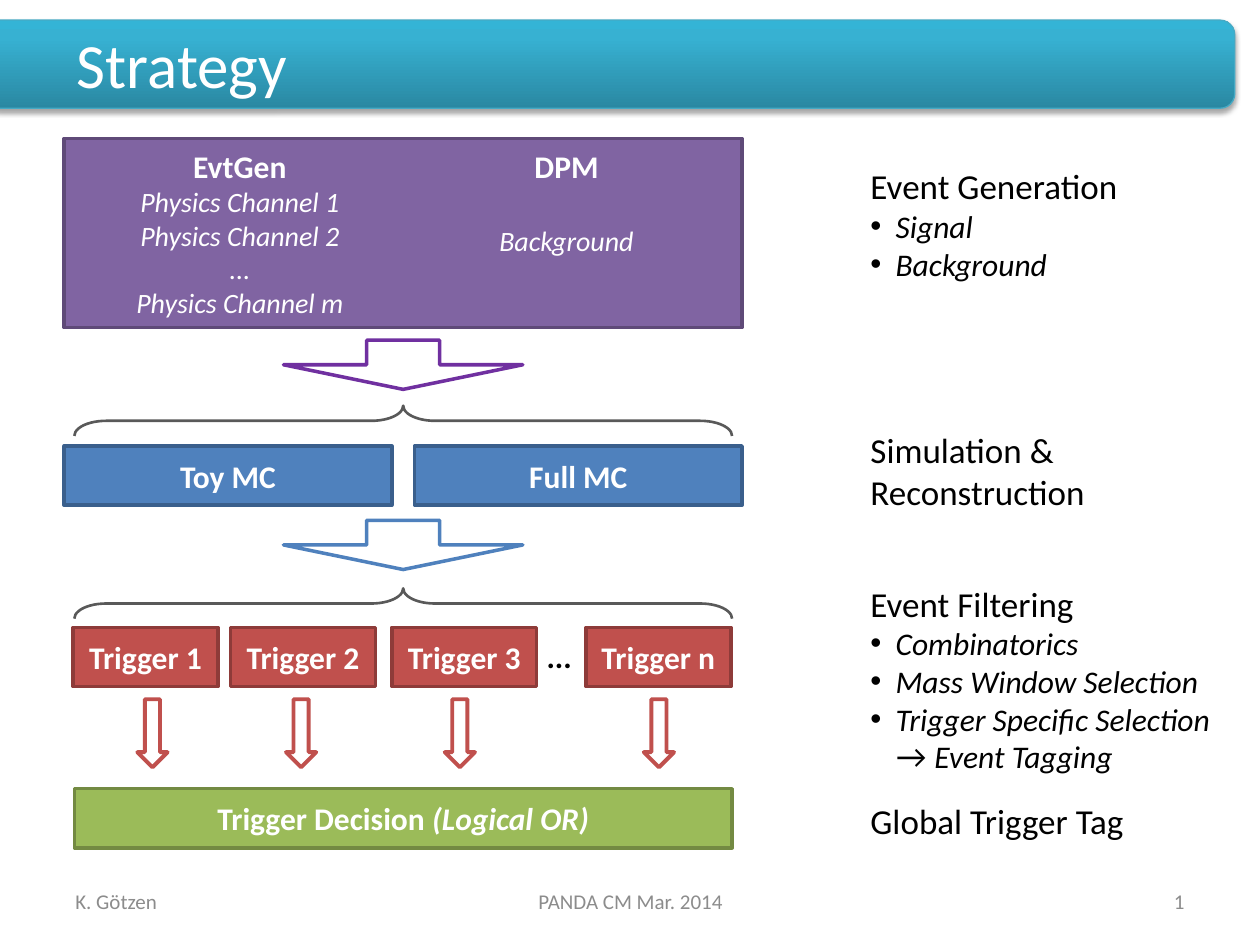
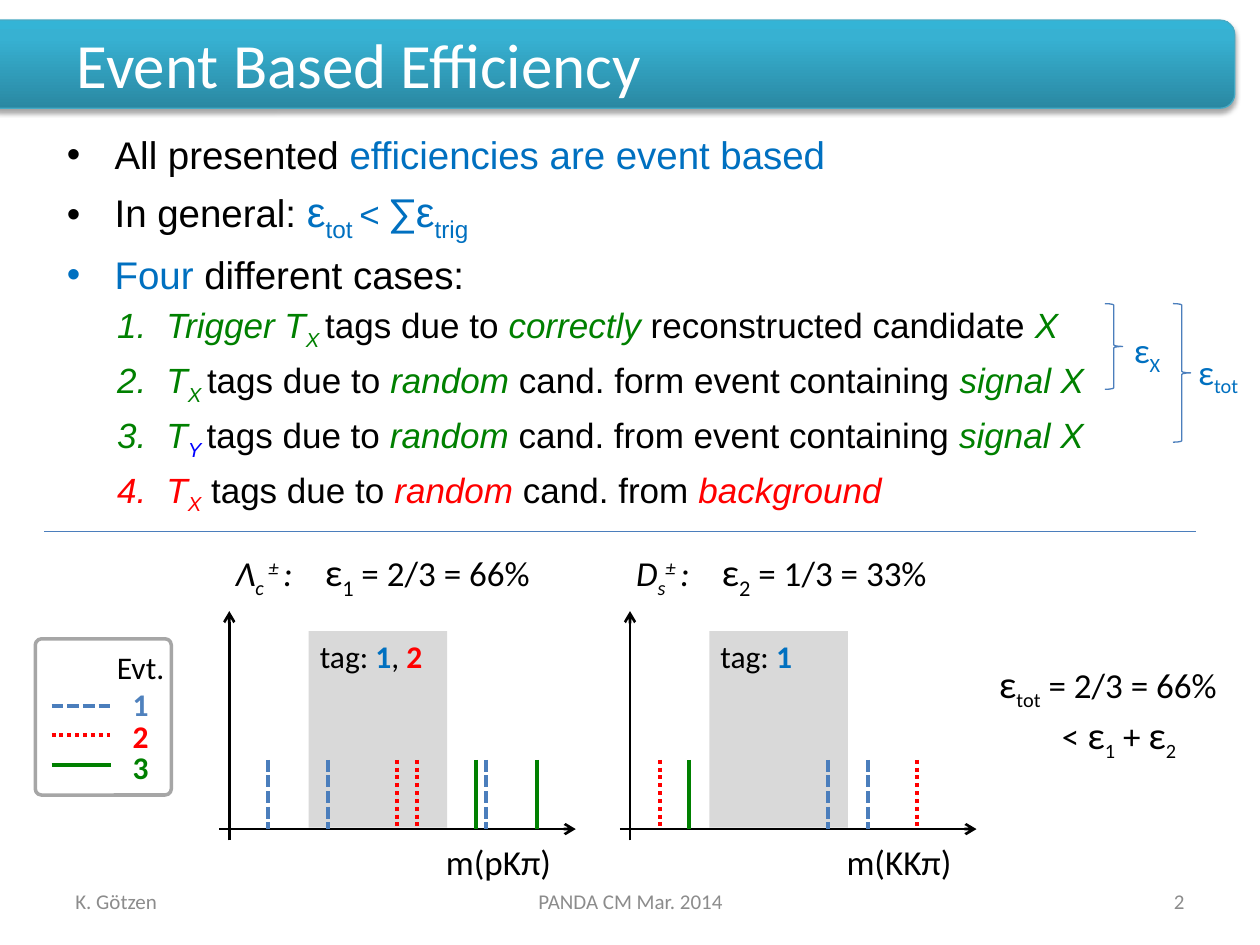
import dataclasses
import typing

import lxml.etree
import pptx
import pptx.dml.color
import pptx.enum.dml
import pptx.enum.shapes
import pptx.enum.text
import pptx.oxml.ns
import pptx.util

Inches = pptx.util.Inches
RGB = pptx.dml.color.RGBColor
Kind = pptx.enum.shapes.MSO_SHAPE
Dash = pptx.enum.dml.MSO_LINE
Align = pptx.enum.text.PP_ALIGN
Fit = pptx.enum.text.MSO_AUTO_SIZE

BLACK, WHITE = RGB(0, 0, 0), RGB(255, 255, 255)
GRAY, SILVER, PALE, DARK = (RGB(0x8C, 0x8C, 0x8C), RGB(0xA6, 0xA6, 0xA6),
                            RGB(0xD9, 0xD9, 0xD9), RGB(0x59, 0x59, 0x59))
TEAL = RGB(0x46, 0xAA, 0xC5)
PURPLE, PLUM, VIOLET = RGB(0x80, 0x64, 0xA2), RGB(0x5F, 0x4A, 0x78), RGB(0x70, 0x30, 0xA0)
BLUE, NAVY, STEEL = RGB(0x4F, 0x81, 0xBD), RGB(0x3A, 0x5F, 0x8C), RGB(0x4B, 0x7E, 0xBC)
BRICK, MAROON = RGB(0xC0, 0x50, 0x4D), RGB(0x8E, 0x3B, 0x39)
LIME, OLIVE = RGB(0x9B, 0xBB, 0x59), RGB(0x73, 0x8A, 0x42)
AZURE, RED, GREEN, PURE = RGB(0, 0x70, 0xC0), RGB(255, 0, 0), RGB(0, 0x80, 0), RGB(0, 0, 255)
BAND = ((0, "2A88A2"), (80, "37B1D2"), (100, "34B4D6"))
SUB, SUP = -25, 30


class Run(typing.NamedTuple):
    text: str
    color: typing.Optional[RGB] = None
    size: typing.Optional[float] = None
    ital: typing.Optional[bool] = None
    bold: typing.Optional[bool] = None
    base: int = 0
    font: typing.Optional[str] = None


@dataclasses.dataclass
class Para:
    runs: typing.Sequence[Run]
    size: float = 18
    color: RGB = BLACK
    font: str = "Calibri"
    bold: bool = False
    ital: bool = False
    align: Align = Align.LEFT
    mark: str = ""
    left: float = 0
    hang: float = 0
    tab: float = 0
    before: typing.Optional[float] = None
    lead: typing.Optional[float] = None
    level: int = 0


class Event(typing.NamedTuple):
    name: str
    line: RGB
    ink: RGB
    dash: typing.Optional[Dash]


class Plot(typing.NamedTuple):
    left: float
    head: typing.Sequence[Run]
    tab: float
    tags: typing.Sequence[Run]
    axis: str
    hits: typing.Sequence[typing.Sequence[float]]


def plain(text: str, **look) -> Para:
    return Para([Run(text)], **look)


def node(parent, tag: str, **attrs):
    return lxml.etree.SubElement(parent, pptx.oxml.ns.qn("a:" + tag), attrs)


def write(frame, paras: typing.Sequence[Para]) -> None:
    for i, para in enumerate(paras):
        p = frame.add_paragraph() if i else frame.paragraphs[0]
        p.alignment, p.level = para.align, para.level
        props = p._p.get_or_add_pPr()
        if para.left:
            props.set("marL", str(Inches(para.left)))
            props.set("indent", str(Inches(-para.hang)))
        if para.before is not None:
            p.space_before = pptx.util.Pt(para.before)
        if para.lead:
            p.line_spacing = pptx.util.Pt(para.lead)
        if para.mark == "1.":
            node(props, "buFont", typeface="+mj-lt")
            node(props, "buAutoNum", type="arabicPeriod")
        elif para.mark:
            node(props, "buFont", typeface="Arial")
            node(props, "buChar", char=para.mark)
        if para.tab:
            node(node(props, "tabLst"), "tab", pos=str(Inches(para.tab)), algn="l")
        p.font.size, p.font.name = pptx.util.Pt(para.size), para.font
        p.font.color.rgb = para.color
        p.font.bold, p.font.italic = para.bold, para.ital
        for run in para.runs:
            if run.text == "\n":
                p.add_line_break()
                continue
            r = p.add_run()
            r.text = run.text
            if run.color is not None:
                r.font.color.rgb = run.color
            if run.size:
                r.font.size = pptx.util.Pt(run.size)
            if run.ital is not None:
                r.font.italic = run.ital
            if run.bold is not None:
                r.font.bold = run.bold
            if run.font:
                r.font.name = run.font
            if run.base:
                r.font._element.set("baseline", str(run.base * 1000))


def place(shape, at: typing.Sequence[float]) -> None:
    shape.left, shape.top, shape.width, shape.height = map(Inches, at)


def label(slide, at: typing.Sequence[float], *paras: Para, wrap: bool = False,
          mid: bool = False):
    box = slide.shapes.add_textbox(*map(Inches, at))
    frame = box.text_frame
    frame.word_wrap = wrap
    frame.auto_size = Fit.NONE if mid else Fit.SHAPE_TO_FIT_TEXT
    if mid:
        frame.vertical_anchor = pptx.enum.text.MSO_ANCHOR.MIDDLE
    write(frame, paras)
    return box


def draw(slide, kind: Kind, at: typing.Sequence[float], fill=None, line=None,
         width: float = 2, adjust: typing.Sequence[float] = (), turn: float = 0,
         paras: typing.Sequence[Para] = ()):
    shape = slide.shapes.add_shape(kind, *map(Inches, at))
    shape.shadow.inherit = False
    shape.rotation = turn
    for i, value in enumerate(adjust):
        shape.adjustments[i] = value
    if fill is None:
        shape.fill.background()
    else:
        shape.fill.solid()
        shape.fill.fore_color.rgb = fill
    if line is None:
        shape.line.fill.background()
    else:
        shape.line.color.rgb = line
        shape.line.width = pptx.util.Pt(width)
    if paras:
        write(shape.text_frame, paras)
    return shape


def stroke(slide, start: typing.Sequence[float], end: typing.Sequence[float], color: RGB,
           width: float, dash: typing.Optional[Dash] = None, arrow: bool = False) -> None:
    line = slide.shapes.add_connector(pptx.enum.shapes.MSO_CONNECTOR.STRAIGHT,
                                      *map(Inches, (*start, *end)))
    line.line.color.rgb = color
    line.line.width = pptx.util.Pt(width)
    if dash:
        line.line.dash_style = dash
    if arrow:
        node(line.line._get_or_add_ln(), "tailEnd", type="arrow")
    node(line._element.spPr, "effectLst")


def add_band(deck, slide) -> None:
    """Draw the title band and hand it to the master, behind all else."""
    band = draw(slide, Kind.ROUNDED_RECTANGLE, (-0.12, 0.16, 9.92, 0.7), TEAL, TEAL, 0.75)
    band.fill.gradient()
    band.fill.gradient_angle = 90
    stops = band._element.spPr.find(".//" + pptx.oxml.ns.qn("a:gsLst"))
    for stop in list(stops):
        stops.remove(stop)
    for pos, color in BAND:
        node(node(stops, "gs", pos=str(pos * 1000)), "srgbClr", val=color)
    effects = band._element.spPr.find(pptx.oxml.ns.qn("a:effectLst"))
    shade = node(effects, "outerShdw", blurRad="40000", dist="23000", dir="5400000",
                 rotWithShape="0")
    node(node(shade, "srgbClr", val="000000"), "alpha", val="35000")
    band._element.nvSpPr.cNvPr.set("id", "99")
    deck.slide_master.shapes.element.insert(2, band._element)


def add_page(deck, layout: int, title: str, number: int):
    slide = deck.slides.add_slide(deck.slide_layouts[layout])
    head = slide.shapes.title
    place(head, (0.51, 0.23, 8.99, 0.54))
    head.text_frame.auto_size = Fit.NONE
    head.text_frame.vertical_anchor = pptx.enum.text.MSO_ANCHOR.MIDDLE
    write(head.text_frame, [plain(title, size=36, color=WHITE)])
    # Footer
    look = dict(size=12, color=GRAY)
    label(slide, (0.5, 6.95, 2.33, 0.4), plain("K. Götzen", **look), wrap=True, mid=True)
    label(slide, (3.42, 6.95, 3.17, 0.4),
          plain("PANDA CM Mar. 2014", align=Align.CENTER, **look), wrap=True, mid=True)
    page = label(slide, (7.17, 6.95, 2.33, 0.4), Para([], align=Align.RIGHT, **look),
                 wrap=True, mid=True)
    field = node(page.text_frame.paragraphs[0]._p, "fld", type="slidenum",
                 id="{B6F15528-21DE-4FAA-801E-634DDDAF4B2B}")
    node(field, "t").text = str(number)
    return slide


def strategy(slide) -> None:
    bold = dict(color=WHITE, bold=True, align=Align.CENTER)
    thin = dict(size=16, color=WHITE, ital=True, align=Align.CENTER)
    # Event generation
    names = ("Physics Channel 1", "Physics Channel 2", "...", "Physics Channel m")
    source = draw(slide, Kind.RECTANGLE, (0.51, 1.1, 5.38, 1.5), PURPLE, PLUM, paras=[
        plain("EvtGen", **bold), *(plain(name, **thin) for name in names),
        plain("DPM", **bold), plain("Background", before=22, **thin)])
    source.text_frame._txBody.bodyPr.set("numCol", "2")
    # Simulation
    for left, name in ((0.51, "Toy MC"), (3.29, "Full MC")):
        draw(slide, Kind.RECTANGLE, (left, 3.54, 2.6, 0.47), BLUE, NAVY,
             paras=[plain(name, **bold)])
    # Wide arrows and braces between the stages
    for top, color in ((2.7, VIOLET), (4.13, BLUE)):
        draw(slide, Kind.DOWN_ARROW, (2.25, top, 1.9, 0.39), WHITE, color,
             adjust=(0.305, 0.5))
    for top in (0.73, 2.18):
        draw(slide, Kind.LEFT_BRACE, (3.08, top, 0.24, 5.22), None, DARK, 1.5,
             (1.05, 0.5), 90)
    # Triggers, each with its arrow
    for sign, left, tip in (("1", 0.58, 1.09), ("2", 1.83, 2.27), ("3", 3.11, 3.53),
                            ("n", 4.65, 5.11)):
        draw(slide, Kind.RECTANGLE, (left, 4.98, 1.15, 0.47), BRICK, MAROON,
             paras=[plain("Trigger " + sign, **bold)])
        draw(slide, Kind.DOWN_ARROW, (tip, 5.55, 0.24, 0.54), WHITE, BRICK, 2.25)
    label(slide, (4.24, 5.01, 0.4, 0.4), plain("...", bold=True))
    draw(slide, Kind.RECTANGLE, (0.59, 6.26, 5.22, 0.47), LIME, OLIVE, paras=[
        Para([Run("Trigger Decision "), Run("(Logical OR)", ital=True)], **bold)])
    # Notes on the right
    dot = dict(ital=True, mark="•", left=0.2, hang=0.2)
    label(slide, (6.81, 1.26, 2.18, 1.04), plain("Event Generation", size=20),
          plain("Signal", **dot), plain("Background", **dot))
    label(slide, (6.81, 3.35, 1.98, 0.77), plain("Simulation &", size=20),
          plain("Reconstruction", size=20))
    label(slide, (6.81, 4.57, 3.06, 1.65), plain("Event Filtering", size=20),
          plain("Combinatorics", **dot), plain("Mass Window Selection", **dot),
          Para([Run("Trigger Specific Selection"), Run("\n"), Run("→ ", font="Lato"),
                Run("Event Tagging")], **dot), wrap=True)
    label(slide, (6.81, 6.3, 2.23, 0.44), plain("Global Trigger Tag", size=20))


def case(start: str, sub: Run, mid: str, how: str, tail: str, end: str, ink: RGB) -> Para:
    runs = [Run(start, ink, ital=True), sub, Run(mid), Run(how, ink, ital=True),
            Run(tail), Run(end, ink, ital=True)]
    return Para(runs, 20, font="Arial", mark="1.", left=0.79, hang=0.39, level=1)


def sub(text: str, ink: RGB) -> Run:
    return Run(text, ink, ital=True, base=SUB)


def chart(slide, plot: Plot, events: typing.Sequence[Event]) -> None:
    x = plot.left
    draw(slide, Kind.RECTANGLE, (x + 0.63, 5.01, 1.1, 1.56), PALE)
    stroke(slide, (x - 0.08, 6.58), (x + 2.75, 6.58), BLACK, 1.5, arrow=True)
    stroke(slide, (x, 6.67), (x, 4.85), BLACK, 1.5, arrow=True)
    for event, spots in zip(events, plot.hits):
        for spot in spots:
            stroke(slide, (spot, 6.03), (spot, 6.58), event.line, 2.25, event.dash)
    label(slide, (x - 0.05, 4.3, 2.6, 0.47), Para(plot.head, 20, tab=plot.tab), wrap=True)
    label(slide, (x + 1.62, 6.62, 1.05, 0.44), plain(plot.axis, size=20))
    label(slide, (x + 0.62, 5.01, 1.1, 0.4), Para([Run("tag: "), *plot.tags]), wrap=True)


def rates(slide) -> None:
    # Bullets and the four cases
    body = slide.placeholders[1]
    place(body, (0.43, 0.99, 9.29, 3.23))
    body.text_frame.auto_size = Fit.NONE
    dot = dict(size=22, font="Arial", mark="•", left=0.38, hang=0.38)
    tags = "tags due to "
    write(body.text_frame, [
        Para([Run("All presented "), Run("efficiencies are event based", AZURE)],
             before=0, **dot),
        Para([Run("In general: "), Run("ε", AZURE, 24), Run("tot ", AZURE, 24, base=SUB),
              Run("< ", AZURE, 20), Run("∑", AZURE, font="Lato"), Run("ε", AZURE, 24),
              Run("trig", AZURE, 24, base=SUB)], **dot),
        Para([Run("Four", AZURE), Run(" different cases:")], **dot),
        case("Trigger T", sub("X ", GREEN), tags, "correctly",
             " reconstructed candidate ", "X", GREEN),
        case("T", sub("X ", GREEN), tags, "random", " cand. form event containing",
             " signal X", GREEN),
        case("T", sub("Y ", PURE), tags, "random", " cand. from event containing",
             " signal X", GREEN),
        case("T", sub("X", RED), " " + tags, "random", " cand. from ", "background", RED)])
    # Braces beside the cases
    for left, tall, at, sign in ((8.77, 0.68, (8.9, 2.56, 0.43, 0.44), "X"),
                                 (9.31, 1.1, (9.41, 2.73, 0.55, 0.44), "tot")):
        draw(slide, Kind.RIGHT_BRACE, (left, 2.41, 0.14, tall), None, STEEL, 0.75)
        label(slide, at, Para([Run("ε"), Run(sign, base=SUB)], 20, AZURE))
    stroke(slide, (0.35, 4.22), (9.49, 4.22), STEEL, 0.75)
    # Legend
    events = (Event("1", STEEL, BLUE, Dash.SQUARE_DOT), Event("2", RED, RED, Dash.ROUND_DOT),
              Event("3", GREEN, GREEN, None))
    for i, event in enumerate(events):
        y = 5.6 + 0.235 * i
        stroke(slide, (0.41, y), (0.88, y), event.line, 2.25, event.dash)
    label(slide, (0.82, 5.09, 0.59, 1.21), plain("Evt.", align=Align.CENTER),
          *(plain(e.name, color=e.ink, bold=True, align=Align.CENTER,
                  lead=18 if i else None) for i, e in enumerate(events)))
    draw(slide, Kind.ROUNDED_RECTANGLE, (0.28, 5.07, 1.08, 1.24), None, SILVER,
         adjust=(0.046,))
    # Mass plots
    one, two = Run("1", AZURE, bold=True), Run("2", RED, bold=True)
    for plot in (
            Plot(1.82, [Run("Λ", ital=True), sub("c", BLACK),
                        Run(" ± ", ital=True, base=SUP), Run(":\t", ital=True),
                        Run("ε", size=22), Run("1", size=22, base=SUB),
                        Run(" = 2/3 = 66%")], 0.71, [one, Run(", "), two], "m(pKπ)",
                 ((2.13, 2.6, 3.86), (3.15, 3.31), (3.78, 4.26))),
            Plot(5, [Run("D", ital=True), sub("s", BLACK),
                     Run("± ", ital=True, base=SUP), Run(":\t", ital=True),
                     Run("ε", size=22), Run("2", size=22, base=SUB),
                     Run(" = 1/3 = 33%")], 0.68, [one], "m(KKπ)",
                 ((6.57, 6.89), (5.24, 7.28), (5.47,)))):
        chart(slide, plot, events)
    # Total
    label(slide, (7.83, 5.19, 1.97, 0.84),
          Para([Run("ε", size=22), Run("tot", base=SUB), Run(" = 2/3 = 66%")], 20),
          Para([Run("< "), Run("ε", size=22), Run("1", base=SUB), Run(" + "),
                Run("ε", size=22), Run("2", base=SUB)], 20, left=0.5))


def main() -> None:
    deck = pptx.Presentation()
    deck.slide_width, deck.slide_height = Inches(10), Inches(7.5)
    first = add_page(deck, 5, "Strategy", 7)
    add_band(deck, first)
    strategy(first)
    rates(add_page(deck, 1, "Event Based Efficiency", 8))
    deck.save("out.pptx")


if __name__ == "__main__":
    main()
